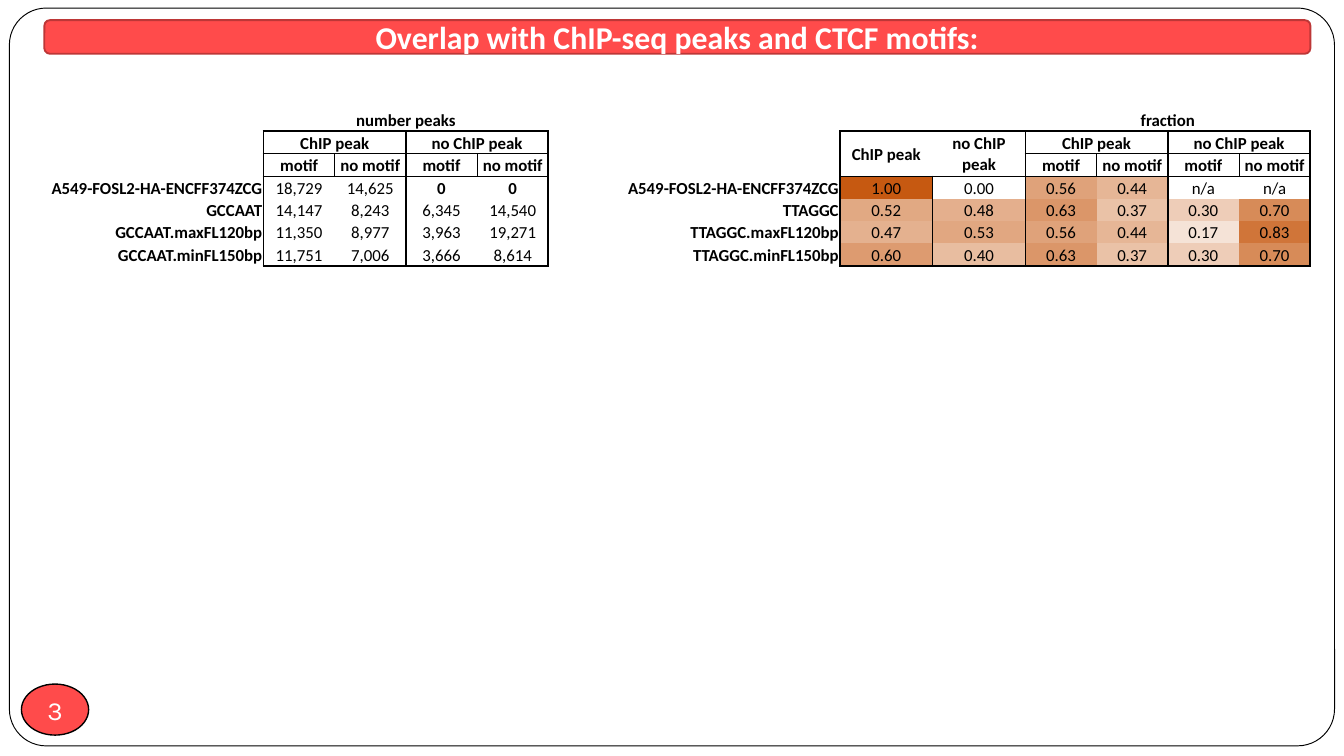
from lxml.etree import SubElement
from pptx import Presentation
from pptx.dml.color import RGBColor
from pptx.enum.shapes import MSO_SHAPE as Preset
from pptx.enum.text import MSO_ANCHOR as Anchor, PP_ALIGN as Align
from pptx.oxml.ns import qn
from pptx.util import Inches, Pt

BLACK = RGBColor(0x00, 0x00, 0x00)
WHITE = RGBColor(0xFF, 0xFF, 0xFF)
RED = RGBColor(0xFF, 0x4B, 0x4B)
DARK_RED = RGBColor(0xBD, 0x37, 0x37)
HEAT = RGBColor(0xC6, 0x59, 0x11)

# Wide-screen page, 16:9
PAGE_WIDTH = 10
PAGE_HEIGHT = PAGE_WIDTH * 9 / 16

# Table layout
NARROW = 0.53
COLUMN_WIDTHS = [1.71] + [NARROW] * 5 + [1.64, 0.69, 0.69] + [NARROW] * 4
ROW_COUNT = 7
TABLE_HEIGHT = 1.17
FIRST_BODY_ROW = 3
LABEL_COLUMNS = (0, 6)
FRACTION_COLUMNS = range(7, 13)
GROUP_EDGES = (1, 3, 5, 7, 9, 11, 13)
MOTIF_EDGES = (2, 4, 10, 12)
THIN, THICK = 0.5, 1

# Header entries: row, column, rows spanned, columns spanned, text
HEADERS = [
    (0, 1, 1, 4, "number peaks"),
    (0, 9, 1, 4, "fraction"),
    (1, 7, 2, 1, "ChIP peak"),
    (1, 8, 2, 1, "no ChIP peak"),
]
for start in (1, 9):
    for offset, group in ((0, "ChIP peak"), (2, "no ChIP peak")):
        HEADERS.append((1, start + offset, 1, 2, group))
        HEADERS.append((2, start + offset, 1, 1, "motif"))
        HEADERS.append((2, start + offset + 1, 1, 1, "no motif"))

BODY = [
    ["A549-FOSL2-HA-ENCFF374ZCG", "18,729", "14,625", "0", "0", "",
     "A549-FOSL2-HA-ENCFF374ZCG", "1.00", "0.00", "0.56", "0.44", "n/a", "n/a"],
    ["GCCAAT", "14,147", "8,243", "6,345", "14,540", "",
     "TTAGGC", "0.52", "0.48", "0.63", "0.37", "0.30", "0.70"],
    ["GCCAAT.maxFL120bp", "11,350", "8,977", "3,963", "19,271", "",
     "TTAGGC.maxFL120bp", "0.47", "0.53", "0.56", "0.44", "0.17", "0.83"],
    ["GCCAAT.minFL150bp", "11,751", "7,006", "3,666", "8,614", "",
     "TTAGGC.minFL150bp", "0.60", "0.40", "0.63", "0.37", "0.30", "0.70"],
]


def set_values(target, values):
    for name, value in values.items():
        setattr(target, name, value)


def write_text(paragraph, text, align, size, font_name, color, bold):
    paragraph.alignment = align
    run = paragraph.add_run()
    run.text = text
    set_values(run.font, {"size": Pt(size), "name": font_name, "bold": bold})
    run.font.color.rgb = color


def add_panel(slide, preset, box, fill, line, line_width):
    shape = slide.shapes.add_shape(preset, *map(Inches, box))
    shape.shadow.inherit = False
    shape.fill.solid()
    shape.fill.fore_color.rgb = fill
    shape.line.color.rgb = line
    shape.line.width = Pt(line_width)
    return shape


def vertical_line(row, edge):
    """Width of the line at a column edge, 0 for none."""
    if row >= 1 and edge in GROUP_EDGES:
        return THICK
    if row == 2 and edge in MOTIF_EDGES:
        return THIN
    if row >= FIRST_BODY_ROW and edge == 8:
        return THICK
    return 0


def horizontal_line(edge, column):
    """Width of the line at a row edge, 0 for none."""
    if column in (0, 5, 6):
        return 0
    if edge in (1, ROW_COUNT):
        return THICK
    if edge == 3 or (edge == 2 and column not in (7, 8)):
        return THIN
    return 0


def set_borders(cell, row, column):
    right, bottom = column + cell.span_width, row + cell.span_height
    sides = {
        "L": vertical_line(row, column),
        "R": vertical_line(row, right),
        "T": horizontal_line(row, column),
        "B": horizontal_line(bottom, column),
    }
    properties = cell._tc.get_or_add_tcPr()
    for side, width in sides.items():
        line = SubElement(properties, qn(f"a:ln{side}"), w=str(Pt(width)))
        if width:
            fill = SubElement(line, qn("a:solidFill"))
            SubElement(fill, qn("a:srgbClr"), val=str(BLACK))
        else:
            SubElement(line, qn("a:noFill"))


def heat_color(fraction):
    return RGBColor(*(round(255 + (end - 255) * fraction) for end in HEAT))


def format_cell(cell, row, column, text):
    edge = Inches(0.01)
    set_values(cell, {"margin_left": edge, "margin_right": edge,
                      "margin_top": edge, "margin_bottom": 0,
                      "vertical_anchor": Anchor.BOTTOM})
    if cell.span_height > 1:
        cell.vertical_anchor = Anchor.MIDDLE
    set_borders(cell, row, column)

    in_body = row >= FIRST_BODY_ROW
    if in_body and column in FRACTION_COLUMNS and text != "n/a":
        cell.fill.solid()
        cell.fill.fore_color.rgb = heat_color(float(text))
    else:
        cell.fill.background()

    paragraph = cell.text_frame.paragraphs[0]
    if text:
        is_label = column in LABEL_COLUMNS
        align = Align.RIGHT if is_label else Align.CENTER
        bold = not in_body or is_label or text == "0"
        write_text(paragraph, text, align, 9, "Calibri", BLACK, bold)
    else:
        # Keeps empty cells from stretching their row
        SubElement(paragraph._p, qn("a:endParaRPr"), sz="900")


def add_peak_table(slide):
    frame = slide.shapes.add_table(
        ROW_COUNT, len(COLUMN_WIDTHS), Inches(0.25), Inches(0.81),
        Inches(sum(COLUMN_WIDTHS)), Inches(TABLE_HEIGHT))
    table = frame.table
    set_values(table, {"first_row": False, "horz_banding": False})
    for column, width in zip(table.columns, COLUMN_WIDTHS):
        column.width = Inches(width)
    for row in table.rows:
        row.height = Inches(TABLE_HEIGHT / ROW_COUNT)

    texts = {}
    for row, column, height, width, text in HEADERS:
        texts[row, column] = text
        if height * width > 1:
            last = table.cell(row + height - 1, column + width - 1)
            table.cell(row, column).merge(last)
    for row, values in enumerate(BODY, FIRST_BODY_ROW):
        for column, text in enumerate(values):
            texts[row, column] = text

    for row in range(ROW_COUNT):
        for column in range(len(COLUMN_WIDTHS)):
            format_cell(table.cell(row, column), row, column,
                        texts.get((row, column), ""))


def main():
    presentation = Presentation()
    set_values(presentation, {"slide_width": Inches(PAGE_WIDTH),
                              "slide_height": Inches(PAGE_HEIGHT)})
    slide = presentation.slides.add_slide(presentation.slide_layouts[6])

    # Rounded page frame
    frame = add_panel(slide, Preset.ROUNDED_RECTANGLE, (0.07, 0.06, 9.86, 5.49),
                      WHITE, BLACK, 0.5)
    frame.adjustments[0] = 0.05

    # Slide number
    badge = add_panel(slide, Preset.OVAL, (0.16, 5.09, 0.5, 0.38), RED, BLACK, 0.75)
    set_values(badge.text_frame, {
        "margin_left": 0, "margin_right": 0, "margin_top": 0, "margin_bottom": 0,
        "word_wrap": False, "vertical_anchor": Anchor.MIDDLE})
    write_text(badge.text_frame.paragraphs[0], "3", Align.CENTER, 14, "Karla", WHITE, False)

    # Title bar
    title = add_panel(slide, Preset.ROUNDED_RECTANGLE, (0.33, 0.15, 9.42, 0.25),
                      RED, DARK_RED, 1)
    title.text_frame.vertical_anchor = Anchor.MIDDLE
    write_text(title.text_frame.paragraphs[0], "Overlap with ChIP-seq peaks and CTCF motifs:",
               Align.CENTER, 17, "Calibri", WHITE, True)

    # Peak counts and fractions
    add_peak_table(slide)
    presentation.save("out.pptx")


if __name__ == "__main__":
    main()
